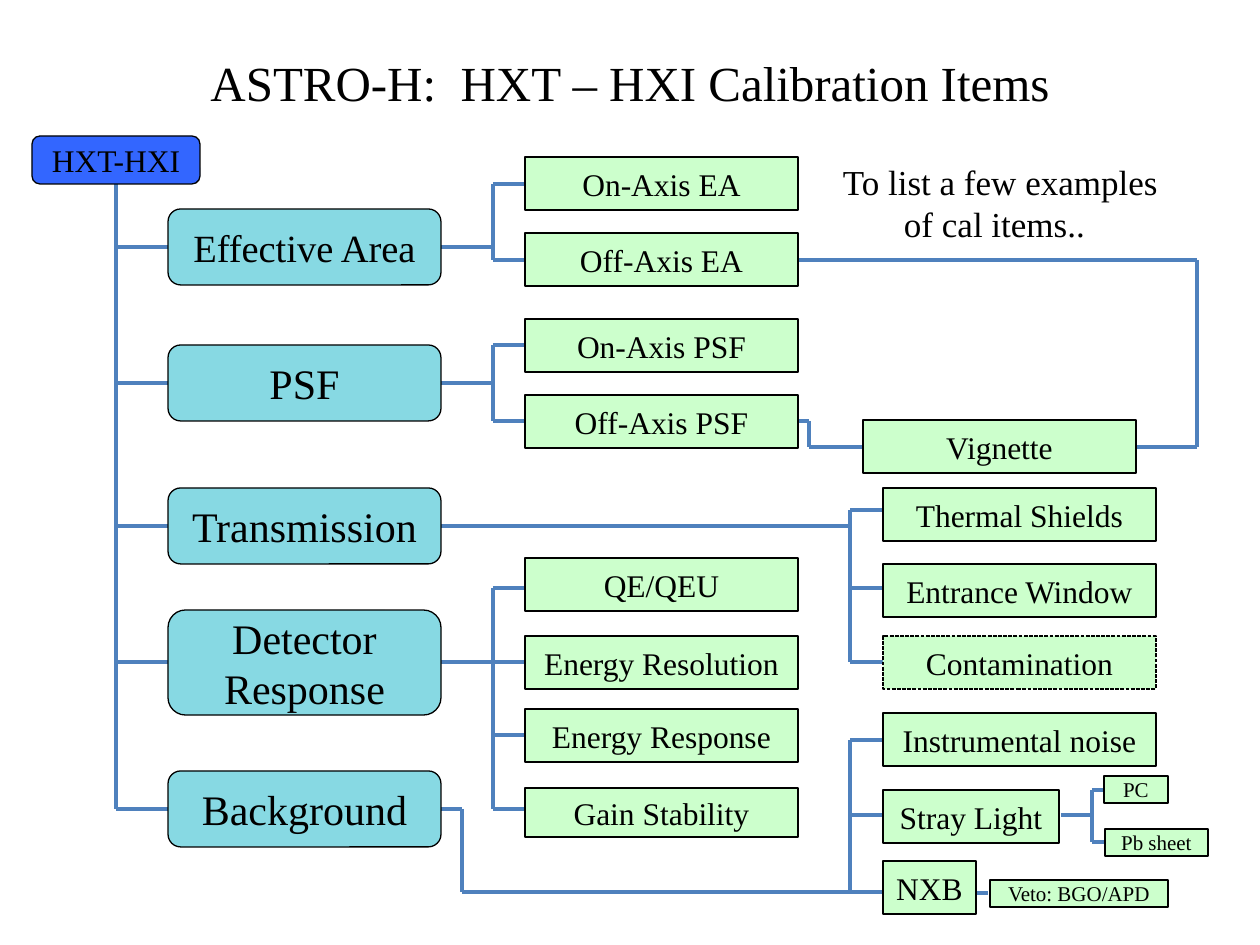
from pptx import Presentation
from pptx.dml.color import RGBColor
from pptx.enum.dml import MSO_LINE
from pptx.enum.shapes import MSO_CONNECTOR, MSO_SHAPE
from pptx.enum.text import MSO_ANCHOR, PP_ALIGN
from pptx.oxml.ns import qn
from pptx.util import Emu, Pt
from lxml.etree import SubElement

FONT = "Times New Roman"
BLACK, BLUE, TEAL, GREEN, WIRE = "000000", "3366FF", "87D9E3", "CCFFCC", "4F81BD"
TOPIC_LEFT, ITEM_LEFT, DETAIL_LEFT = 168, 525, 883
BOX_WIDTH, TOPIC_HEIGHT, ITEM_HEIGHT = 273, 76, 53
TOPIC_RIGHT, ITEM_RIGHT = TOPIC_LEFT + BOX_WIDTH, ITEM_LEFT + BOX_WIDTH
ROOT_TRUNK, ITEM_TRUNK, DETAIL_TRUNK = 116, 493, 850


def px(length):
    """Turn pixels at 126 to the inch into EMU."""
    return Emu(round(length * 914400 / 126))


def color(value):
    """Return the colour of a hex string."""
    return RGBColor.from_string(value)


def write(frame, text, size=18, align=PP_ALIGN.CENTER, anchor=MSO_ANCHOR.MIDDLE,
          wrap=True, inset=0, indents=()):
    """Fill a text frame, one paragraph for each line of text."""
    frame.word_wrap = wrap
    frame.vertical_anchor = anchor
    frame.margin_left = frame.margin_right = px(inset)
    frame.margin_top = frame.margin_bottom = px(inset / 2)
    for index, line in enumerate(text.split("\n")):
        para = frame.add_paragraph() if index else frame.paragraphs[0]
        para.alignment = align
        if index < len(indents):
            para._p.get_or_add_pPr().set("marL", str(px(indents[index])))
        span = para.add_run()
        span.text = line
        span.font.name = FONT
        span.font.size = Pt(size)
        span.font.color.rgb = color(BLACK)


def add_label(slide, text, left, top, width, height, **text_format):
    """Add a text box without fill or outline."""
    box = slide.shapes.add_textbox(px(left), px(top), px(width), px(height))
    write(box.text_frame, text, **text_format)


def add_box(slide, text, left, top, width=BOX_WIDTH, height=ITEM_HEIGHT, fill=GREEN,
            kind=MSO_SHAPE.RECTANGLE, size=18, dash=None):
    """Add a filled, outlined box with centred text."""
    box = slide.shapes.add_shape(kind, px(left), px(top), px(width), px(height))
    box.shadow.inherit = False
    box.fill.solid()
    box.fill.fore_color.rgb = color(fill)
    box.line.color.rgb = color(BLACK)
    box.line.width = Pt(0.75)
    if dash:
        box.line.dash_style = dash
    write(box.text_frame, text, size=size)


def add_route(slide, *points):
    """Join successive points with straight connectors."""
    for start, end in zip(points, points[1:]):
        line = slide.shapes.add_connector(
            MSO_CONNECTOR.STRAIGHT, *(px(value) for value in start + end))
        line.line.color.rgb = color(WIRE)
        line.line.width = Pt(2)
        SubElement(line._element.spPr, qn("a:effectLst"))


def add_branch(slide, trunk, right, levels, top=None):
    """Draw a vertical trunk with a twig to the right at each level."""
    add_route(slide, (trunk, levels[0] if top is None else top), (trunk, levels[-1]))
    for level in levels:
        add_route(slide, (trunk, level), (right, level))


def add_wiring(slide):
    """Draw all the lines of the tree."""
    add_branch(slide, ROOT_TRUNK, TOPIC_LEFT, (247, 383, 526, 662, 809), top=184)
    for stem, levels in ((247, (184, 260)), (383, (345, 421)), (662, (588, 662, 735, 809))):
        add_route(slide, (TOPIC_RIGHT, stem), (ITEM_TRUNK, stem))
        add_branch(slide, ITEM_TRUNK, ITEM_LEFT, levels)
    for levels in ((510, 588, 662), (740, 815, 892)):
        add_branch(slide, DETAIL_TRUNK, DETAIL_LEFT, levels)
    add_branch(slide, 1092, 1104, (790, 842))
    add_route(slide, (TOPIC_RIGHT, 526), (DETAIL_TRUNK, 526))
    add_route(slide, (TOPIC_RIGHT, 809), (462, 809), (462, 892), (DETAIL_TRUNK, 892))
    add_route(slide, (ITEM_RIGHT, 260), (1197, 260), (1197, 447), (1136, 447))
    add_route(slide, (ITEM_RIGHT, 421), (809, 421), (809, 447), (863, 447))
    add_route(slide, (1061, 815), (1092, 815))
    add_route(slide, (977, 893), (988, 893))


def add_boxes(slide):
    """Place the root, the topics, the items and their details."""
    rounded = MSO_SHAPE.FLOWCHART_ALTERNATE_PROCESS
    add_box(slide, "HXT-HXI", 32, 136, 168, 48, fill=BLUE, kind=rounded)
    for text, top, height, size in (
            ("Effective Area", 209, TOPIC_HEIGHT, 22),
            ("PSF", 345, TOPIC_HEIGHT, 24),
            ("Transmission", 488, TOPIC_HEIGHT, 24),
            ("Detector Response", 610, 105, 24),
            ("Background", 771, TOPIC_HEIGHT, 24)):
        add_box(slide, text, TOPIC_LEFT, top, height=height, fill=TEAL, kind=rounded, size=size)
    for text, top in (
            ("On-Axis EA", 157), ("Off-Axis EA", 233), ("On-Axis PSF", 319),
            ("Off-Axis PSF", 395), ("QE/QEU", 558), ("Energy Resolution", 636),
            ("Energy Response", 709)):
        add_box(slide, text, ITEM_LEFT, top)
    add_box(slide, "Gain Stability", ITEM_LEFT, 788, height=49)
    add_box(slide, "Vignette", 863, 420)
    for text, top, width in (
            ("Thermal Shields", 488, BOX_WIDTH), ("Entrance Window", 564, BOX_WIDTH),
            ("Instrumental noise", 713, BOX_WIDTH), ("Stray Light", 790, 176),
            ("NXB", 861, 93)):
        add_box(slide, text, DETAIL_LEFT, top, width)
    add_box(slide, "Contamination", DETAIL_LEFT, 636, dash=MSO_LINE.SQUARE_DOT)
    for text, left, top, width in (
            ("PC", 1104, 776, 64), ("Pb sheet", 1105, 829, 103),
            ("Veto: BGO/APD", 990, 880, 178)):
        add_box(slide, text, left, top, width, 27, size=12)


def main():
    """Build and save the slide."""
    deck = Presentation()
    deck.slide_width, deck.slide_height = px(1260), px(945)
    slide = deck.slides.add_slide(deck.slide_layouts[6])
    add_label(slide, "ASTRO-H:  HXT – HXI Calibration Items", 63, 38, 1134, 88, size=28)
    add_wiring(slide)
    add_boxes(slide)
    add_label(slide, "To list a few examples\nof cal items..", 830, 154, 343, 97, size=20,
              align=PP_ALIGN.LEFT, anchor=MSO_ANCHOR.TOP, wrap=False, inset=13,
              indents=(0, 61))
    deck.save("out.pptx")


if __name__ == "__main__":
    main()
